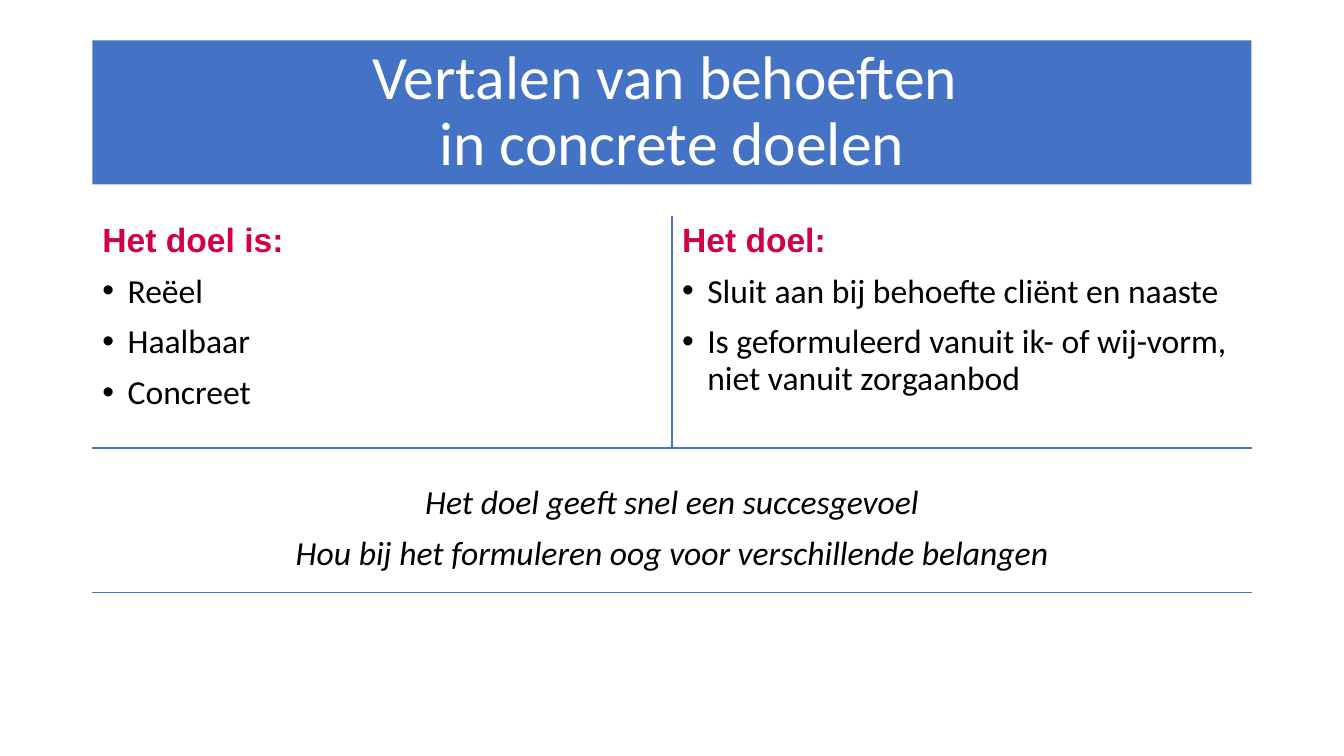
import pptx
import pptx.dml.color
import pptx.enum.shapes
import pptx.enum.text
import pptx.oxml
import pptx.oxml.ns
import pptx.util

Pt = pptx.util.Pt
RGBColor = pptx.dml.color.RGBColor
ALIGN = pptx.enum.text.PP_ALIGN
ANCHOR = pptx.enum.text.MSO_ANCHOR

BLUE = RGBColor(0x44, 0x72, 0xC4)
RED = RGBColor(0xD0, 0x02, 0x43)
BLACK = RGBColor(0, 0, 0)
WHITE = RGBColor(255, 255, 255)

LEFT, WIDTH = 66, 828
NAMESPACE = pptx.oxml.ns.nsdecls("a")

COLUMNS = [
    ("Het doel is:", ["Reëel", "Haalbaar", "Concreet"]),
    ("Het doel:", ["Sluit aan bij behoefte cliënt en naaste",
                   "Is geformuleerd vanuit ik- of wij-vorm, niet vanuit zorgaanbod"]),
]
ADVICE = ["Het doel geeft snel een succesgevoel",
          "Hou bij het formuleren oog voor verschillende belangen"]


def add_paragraph(frame, text, size=24, color=BLACK, font="Calibri", spacing=0.9, before=0):
    """Fill the empty first paragraph, or add a new one."""
    first = frame.paragraphs[0]
    para = first if not first.runs else frame.add_paragraph()
    para.add_run().text = text
    para.font.size = Pt(size)
    para.font.name = font
    para.font.color.rgb = color
    para.line_spacing = spacing
    para.space_before = Pt(before)
    return para


def add_bullet(para):
    properties = para._p.get_or_add_pPr()
    properties.set("marL", str(Pt(18)))
    properties.set("indent", str(-Pt(18)))
    for xml in (f'<a:buFont {NAMESPACE} typeface="Arial"/>',
                f'<a:buChar {NAMESPACE} char="•"/>'):
        # Bullet elements stand before the default run properties
        properties.find(pptx.oxml.ns.qn("a:defRPr")).addprevious(pptx.oxml.parse_xml(xml))


def set_borders(cell, sides):
    """Draw blue lines on the given sides, in the order L, R, T, B."""
    properties = cell._tc.get_or_add_tcPr()
    for position, side in enumerate(sides):
        properties.insert(position, pptx.oxml.parse_xml(
            f'<a:ln{side} {NAMESPACE} w="{Pt(1)}"><a:solidFill>'
            f'<a:srgbClr val="{BLUE}"/></a:solidFill></a:ln{side}>'))


def add_title(page, lines):
    box = page.shapes.add_shape(pptx.enum.shapes.MSO_SHAPE.RECTANGLE,
                                Pt(LEFT), Pt(28.8), Pt(WIDTH), Pt(103))
    box.shadow.inherit = False
    box.fill.solid()
    box.fill.fore_color.rgb = BLUE
    box.line.fill.background()
    frame = box.text_frame
    frame.word_wrap = True
    frame.vertical_anchor = ANCHOR.MIDDLE
    for line in lines:
        add_paragraph(frame, line, 44, WHITE).alignment = ALIGN.CENTER


def add_goal_table(page):
    table = page.shapes.add_table(2, 2, Pt(LEFT), Pt(155), Pt(WIDTH), Pt(268)).table
    table.first_row = table.horz_banding = False
    table.rows[0].height = Pt(165)
    table.rows[1].height = Pt(103)
    for cell in table.iter_cells():
        cell.fill.background()

    # Two columns of goals
    for cell, sides, (heading, items) in zip(table.rows[0].cells, ("RB", "LB"), COLUMNS):
        set_borders(cell, sides)
        add_paragraph(cell.text_frame, heading, color=RED, font="Arial",
                      spacing=1).font.bold = True
        for item in items:
            add_bullet(add_paragraph(cell.text_frame, item, before=10))

    # Advice across both columns
    for cell in table.rows[1].cells:
        set_borders(cell, "TB")
    advice = table.cell(1, 0)
    advice.merge(table.cell(1, 1))
    advice.vertical_anchor = ANCHOR.BOTTOM
    advice.margin_bottom = Pt(14)
    for line in ADVICE:
        para = add_paragraph(advice.text_frame, line, before=10)
        para.alignment = ALIGN.CENTER
        para.font.italic = True


def main():
    deck = pptx.Presentation()
    deck.slide_width, deck.slide_height = Pt(960), Pt(540)
    page = deck.slides.add_slide(deck.slide_layouts[6])
    add_title(page, ["Vertalen van behoeften ", "in concrete doelen"])
    add_goal_table(page)
    deck.save("out.pptx")


if __name__ == "__main__":
    main()
